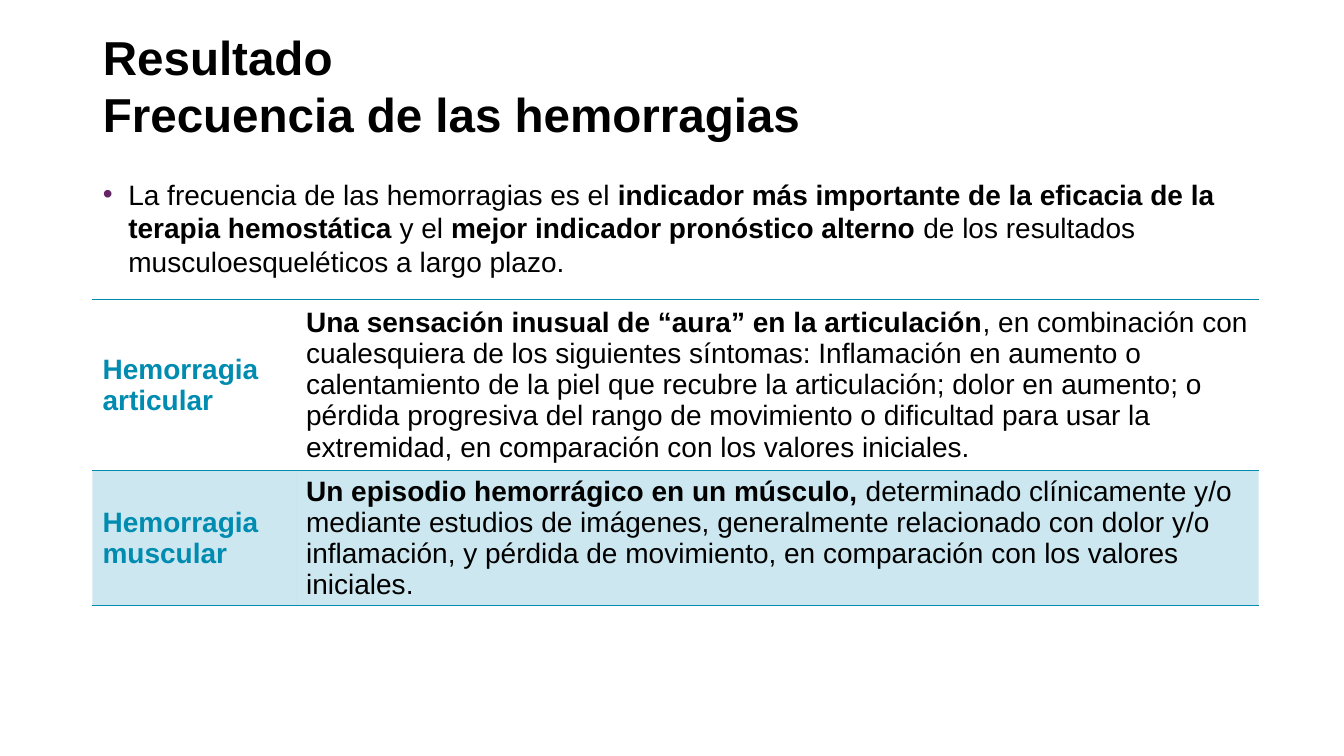
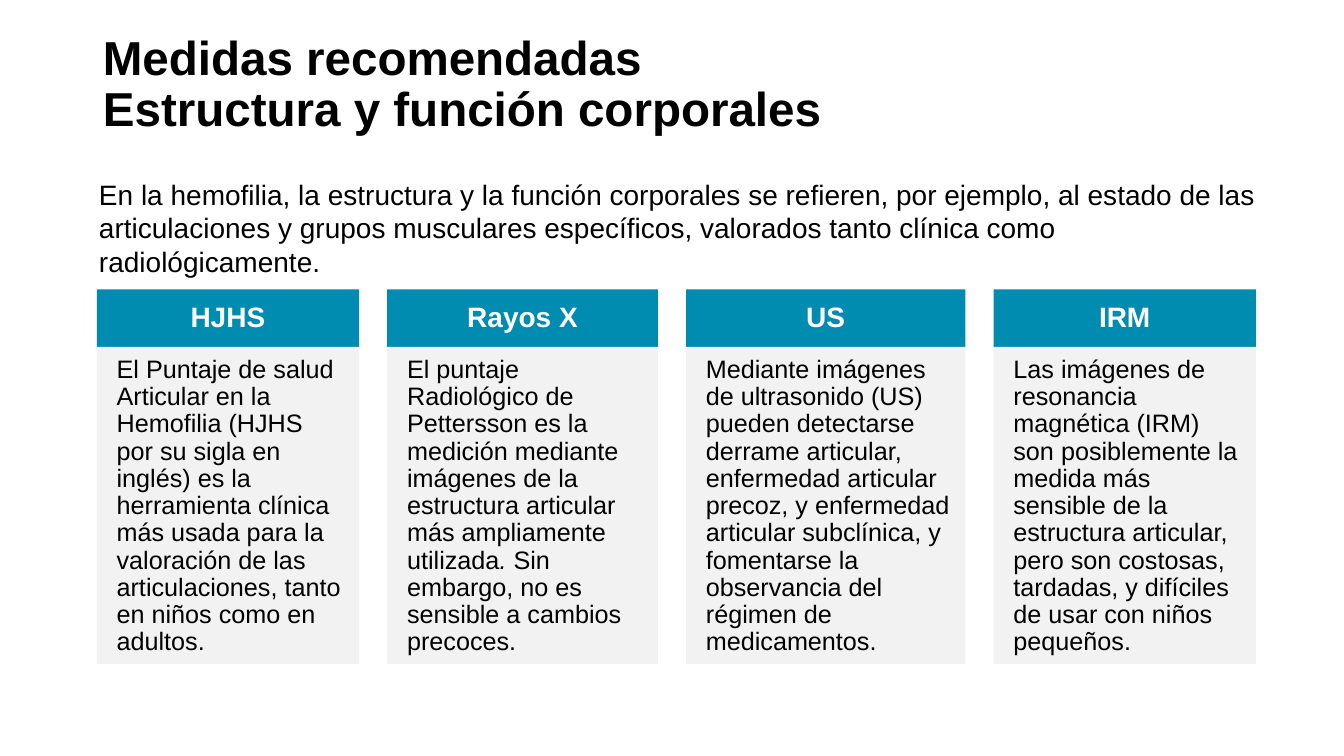
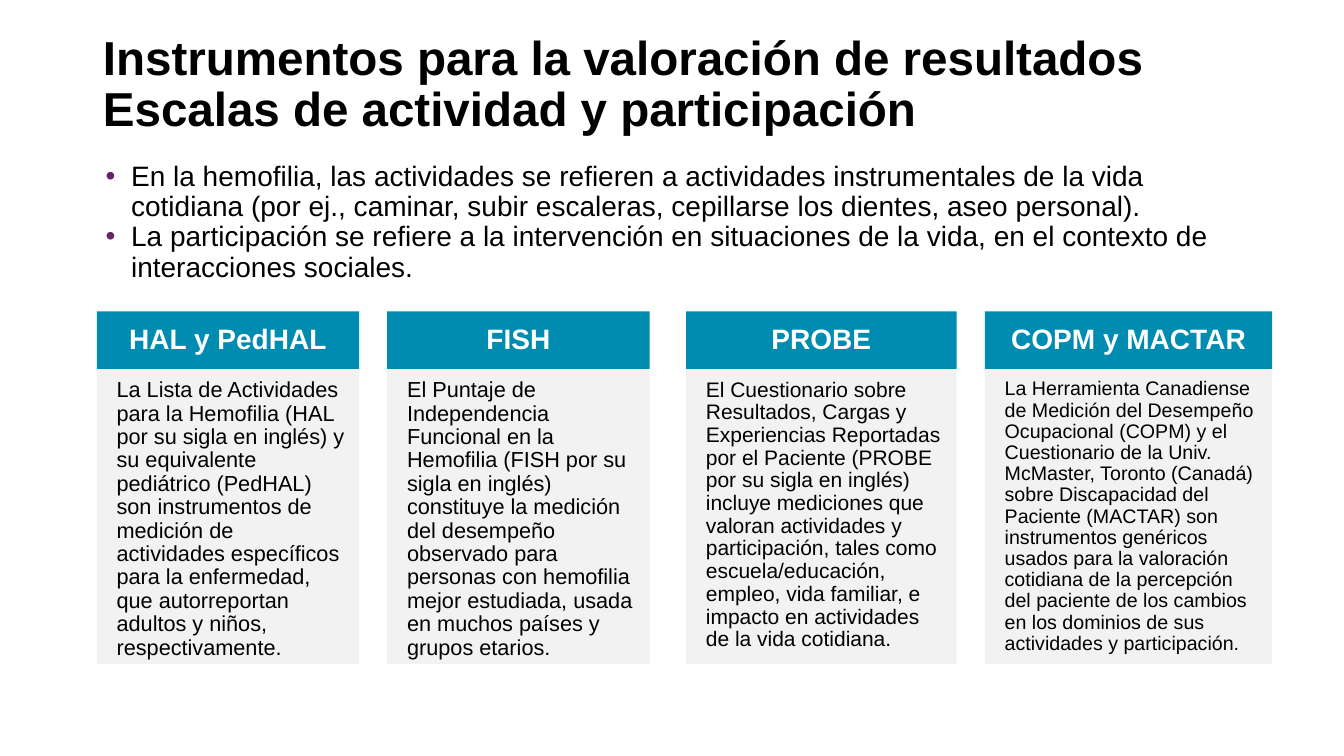
from dataclasses import dataclass

from lxml.etree import SubElement
from pptx import Presentation
from pptx.dml.color import RGBColor
from pptx.enum.shapes import MSO_SHAPE as Shape
from pptx.enum.text import MSO_ANCHOR as Anchor, MSO_AUTO_SIZE as AutoSize, PP_ALIGN as Align
from pptx.oxml.ns import qn
from pptx.util import Cm, Pt


@dataclass(frozen=True)
class Theme:
    font: str = "Arial"
    ink: str = "000000"
    paper: str = "FFFFFF"
    teal: str = "008BB0"
    panel: str = "F2F2F2"
    bullet: str = "642566"
    title_size: float = 34
    text_size: float = 20
    tight: float = 0.9
    tint: int = 20
    rule: float = 1
    no_grid: str = "{2D5ABB26-0587-4C30-8999-92F81FD0307C}"


@dataclass(frozen=True)
class Card:
    heading: str
    width: float
    text: object
    size: float = 18
    gap: float = 0.71


THEME = Theme()

# Content: text is a string or a list of (words, style), style "b" bold or "i" italic
BLEEDS = {
    "title": "Resultado\vFrecuencia de las hemorragias",
    "title_spacing": 1.0,
    "box": (2.34, 4.34, 29.21, 2.51),
    "bulleted": True,
    "spacing": 1.0,
    "body": [[
        ("La frecuencia de las hemorragias es el ", ""),
        ("indicador más importante de la eficacia de la terapia hemostática", "b"),
        (" y el ", ""),
        ("mejor indicador pronóstico alterno ", "b"),
        ("de los resultados musculoesqueléticos a largo plazo.", ""),
    ]],
}
BLEED_ROWS = [
    ("Hemorragia articular", [
        ("Una sensación inusual de “aura” en la articulación", "b"),
        (", en combinación con cualesquiera de los siguientes síntomas: Inflamación en "
         "aumento o calentamiento de la piel que recubre la articulación; dolor en aumento; "
         "o pérdida progresiva del rango de movimiento o dificultad para usar la extremidad, "
         "en comparación con los valores iniciales.", ""),
    ]),
    ("Hemorragia muscular", [
        ("Un episodio hemorrágico en un músculo, ", "b"),
        ("determinado clínicamente y/o mediante estudios de imágenes, generalmente "
         "relacionado con dolor y/o inflamación, y pérdida de movimiento, en comparación "
         "con los valores iniciales.", ""),
    ]),
]
BLEED_COLUMNS = (5.13, 24.26)
BLEED_HEIGHTS = (4.32, 3.33)

STRUCTURE = {
    "title": "Medidas recomendadas\vEstructura y función corporales",
    "title_spacing": THEME.tight,
    "box": (2.24, 4.34, 29.97, 2.18),
    "bulleted": False,
    "spacing": 1.0,
    "body": [
        "En la hemofilia, la estructura y la función corporales se refieren, por ejemplo, al "
        "estado de las articulaciones y grupos musculares específicos, valorados tanto "
        "clínica como radiológicamente.",
    ],
}
STRUCTURE_CARDS = [
    Card("HJHS", 6.61,
         "El Puntaje de salud Articular en la Hemofilia (HJHS por su sigla en inglés) es la "
         "herramienta clínica más usada para la valoración de las articulaciones, tanto en "
         "niños como en adultos."),
    Card("Rayos X", 6.82, [
        ("El puntaje Radiológico de Pettersson es la medición mediante imágenes de la "
         "estructura articular más ampliamente utilizada", ""),
        (". ", "i"),
        ("Sin embargo, no es sensible a cambios precoces.", ""),
    ]),
    Card("US", 7.04,
         "Mediante imágenes de ultrasonido (US) pueden detectarse derrame articular, "
         "enfermedad articular precoz, y enfermedad articular subclínica, y fomentarse la "
         "observancia del régimen de medicamentos."),
    Card("IRM", 6.61,
         "Las imágenes de resonancia magnética (IRM) son posiblemente la medida más sensible "
         "de la estructura articular, pero son costosas, tardadas, y difíciles de usar con "
         "niños pequeños."),
]

SCALES = {
    "title": "Instrumentos para la valoración de resultados\vEscalas de actividad y participación",
    "title_spacing": THEME.tight,
    "box": (2.41, 3.96, 29.21, 3.61),
    "bulleted": True,
    "spacing": THEME.tight,
    "body": [
        "En la hemofilia, las actividades se refieren a actividades instrumentales de la vida "
        "cotidiana (por ej., caminar, subir escaleras, cepillarse los dientes, aseo personal).",
        "La participación se refiere a la intervención en situaciones de la vida, en el "
        "contexto de interacciones sociales.",
    ],
}
SCALE_CARDS = [
    Card("HAL y PedHAL", 6.61,
         "La Lista de Actividades para la Hemofilia (HAL por su sigla en inglés) y su "
         "equivalente pediátrico (PedHAL) son instrumentos de medición de actividades "
         "específicos para la enfermedad, que autorreportan adultos y niños, "
         "respectivamente.", 15.5),
    Card("FISH", 6.61,
         "El Puntaje de Independencia Funcional en la Hemofilia (FISH por su sigla en inglés) "
         "constituye la medición del desempeño observado para personas con hemofilia mejor "
         "estudiada, usada en muchos países y grupos etarios.", 15.5, gap=0.92),
    Card("PROBE", 6.82,
         "El Cuestionario sobre Resultados, Cargas y Experiencias Reportadas por el Paciente "
         "(PROBE por su sigla en inglés) incluye mediciones que valoran actividades y "
         "participación, tales como escuela/educación, empleo, vida familiar, e impacto en "
         "actividades de la vida cotidiana.", 15),
    Card("COPM y MACTAR", 7.24,
         "La Herramienta Canadiense de Medición del Desempeño Ocupacional (COPM) y el "
         "Cuestionario de la Univ. McMaster, Toronto (Canadá) sobre Discapacidad del Paciente "
         "(MACTAR) son instrumentos genéricos usados para la valoración cotidiana de la "
         "percepción del paciente de los cambios en los dominios de sus actividades y "
         "participación.", 14),
]

# Layout, in centimetres
TITLE_BOX = (2.34, 0.64, 29.21, 3.02)
TABLE_LEFT, TABLE_TOP = 2.33, 7.54
CARDS_LEFT, CARDS_BOTTOM, HEADING_HEIGHT = 2.44, 16.73, 1.45
HEADING_INSETS = (0.48, 0.28, 0.48, 0.28)
CARD_INSETS = (0.5, 0.25, 0.35, 0.4)
BULLET_INDENT = 0.64


def place(shape, box):
    shape.left, shape.top, shape.width, shape.height = (Cm(length) for length in box)


def write(paragraph, text, size, color=THEME.ink, bold=False):
    """Fill a paragraph with plain or styled text."""
    for words, style in [(text, "")] if isinstance(text, str) else text:
        run = paragraph.add_run()
        run.text = words
        run.font.name, run.font.size = THEME.font, Pt(size)
        run.font.color.rgb = RGBColor.from_string(color)
        run.font.bold, run.font.italic = bold or style == "b", style == "i"


def set_bullet(paragraph, bulleted):
    properties = paragraph._p.get_or_add_pPr()
    indent = Cm(BULLET_INDENT) if bulleted else 0
    properties.set("marL", str(indent))
    properties.set("indent", str(-indent))
    if bulleted:
        color = SubElement(properties, qn("a:buClr"))
        SubElement(color, qn("a:srgbClr"), val=THEME.bullet)
        SubElement(properties, qn("a:buFont"), typeface=THEME.font)
        SubElement(properties, qn("a:buChar"), char="•")
    else:
        SubElement(properties, qn("a:buNone"))


def add_slide(presentation, content):
    """Add a slide with its title and introductory text."""
    slide = presentation.slides.add_slide(presentation.slide_layouts[1])
    title, body = slide.placeholders

    title.text_frame.text = content["title"]
    title.text_frame.vertical_anchor = Anchor.MIDDLE
    title.text_frame.auto_size = AutoSize.NONE
    heading = title.text_frame.paragraphs[0]
    heading.alignment, heading.line_spacing = Align.LEFT, content["title_spacing"]
    for run in heading.runs:
        run.font.name, run.font.size, run.font.bold = THEME.font, Pt(THEME.title_size), True
        run.font.color.rgb = RGBColor.from_string(THEME.ink)

    place(body, content["box"])
    frame = body.text_frame
    frame.auto_size = AutoSize.NONE
    for index, text in enumerate(content["body"]):
        paragraph = frame.add_paragraph() if index else frame.paragraphs[0]
        set_bullet(paragraph, content["bulleted"])
        paragraph.space_before = Pt(0)
        paragraph.line_spacing = content["spacing"]
        write(paragraph, text, THEME.text_size)
    return slide


def set_border(cell, side):
    line = SubElement(cell._tc.get_or_add_tcPr(), qn(f"a:{side}"), w=str(Pt(THEME.rule)))
    fill = SubElement(line, qn("a:solidFill"))
    SubElement(fill, qn("a:srgbClr"), val=THEME.teal)


def add_bleed_table(slide):
    frame = slide.shapes.add_table(
        len(BLEED_ROWS), len(BLEED_COLUMNS), Cm(TABLE_LEFT), Cm(TABLE_TOP),
        Cm(sum(BLEED_COLUMNS)), Cm(sum(BLEED_HEIGHTS)))
    table = frame.table
    table.first_row = table.horz_banding = False
    table._tbl.tblPr.find(qn("a:tableStyleId")).text = THEME.no_grid
    for column, width in zip(table.columns, BLEED_COLUMNS):
        column.width = Cm(width)
    for row, height in zip(table.rows, BLEED_HEIGHTS):
        row.height = Cm(height)

    for row_index, texts in enumerate(BLEED_ROWS):
        for column_index, text in enumerate(texts):
            cell = table.cell(row_index, column_index)
            is_label = column_index == 0
            cell.vertical_anchor = Anchor.MIDDLE
            write(cell.text_frame.paragraphs[0], text, THEME.text_size,
                  THEME.teal if is_label else THEME.ink, is_label)
            # Borders precede the fill in the cell properties
            set_border(cell, "lnT")
            set_border(cell, "lnB")
            if row_index % 2:
                cell.fill.solid()
                cell.fill.fore_color.rgb = RGBColor.from_string(THEME.teal)
                color = cell._tc.tcPr.find(qn("a:solidFill")).find(qn("a:srgbClr"))
                SubElement(color, qn("a:alpha"), val=str(THEME.tint * 1000))
            else:
                cell.fill.background()


def add_panel(slide, box, fill, insets, anchor, align):
    """Add a flat rectangle and return its paragraph."""
    panel = slide.shapes.add_shape(Shape.RECTANGLE, *(Cm(length) for length in box))
    panel.shadow.inherit = False
    panel.fill.solid()
    panel.fill.fore_color.rgb = RGBColor.from_string(fill)
    panel.line.fill.background()
    frame = panel.text_frame
    frame.word_wrap, frame.vertical_anchor = True, anchor
    frame.margin_left, frame.margin_top, frame.margin_right, frame.margin_bottom = (
        Cm(inset) for inset in insets)
    paragraph = frame.paragraphs[0]
    paragraph.alignment, paragraph.line_spacing = align, THEME.tight
    return paragraph


def add_cards(slide, cards, top):
    left, text_top = CARDS_LEFT, top + HEADING_HEIGHT
    for card in cards:
        heading = add_panel(slide, (left, top, card.width, HEADING_HEIGHT), THEME.teal,
                            HEADING_INSETS, Anchor.MIDDLE, Align.CENTER)
        write(heading, card.heading, THEME.text_size, THEME.paper, bold=True)
        text = add_panel(slide, (left, text_top, card.width, CARDS_BOTTOM - text_top),
                         THEME.panel, CARD_INSETS, Anchor.TOP, Align.LEFT)
        write(text, card.text, card.size)
        left += card.width + card.gap


def main():
    presentation = Presentation()
    presentation.slide_width, presentation.slide_height = Cm(33.87), Cm(19.05)
    place(presentation.slide_layouts[1].placeholders[0], TITLE_BOX)

    add_bleed_table(add_slide(presentation, BLEEDS))
    add_cards(add_slide(presentation, STRUCTURE), STRUCTURE_CARDS, top=7.29)
    add_cards(add_slide(presentation, SCALES), SCALE_CARDS, top=7.85)
    presentation.save("out.pptx")


if __name__ == "__main__":
    main()
